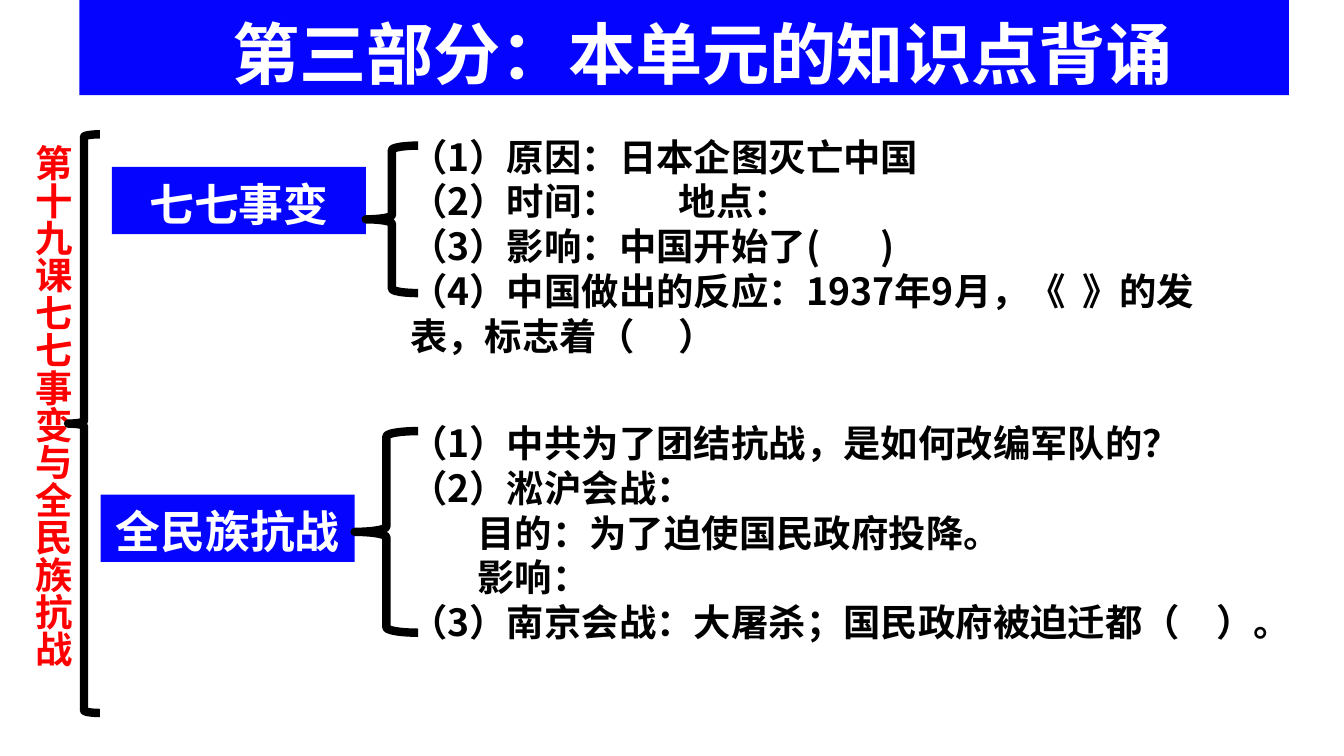
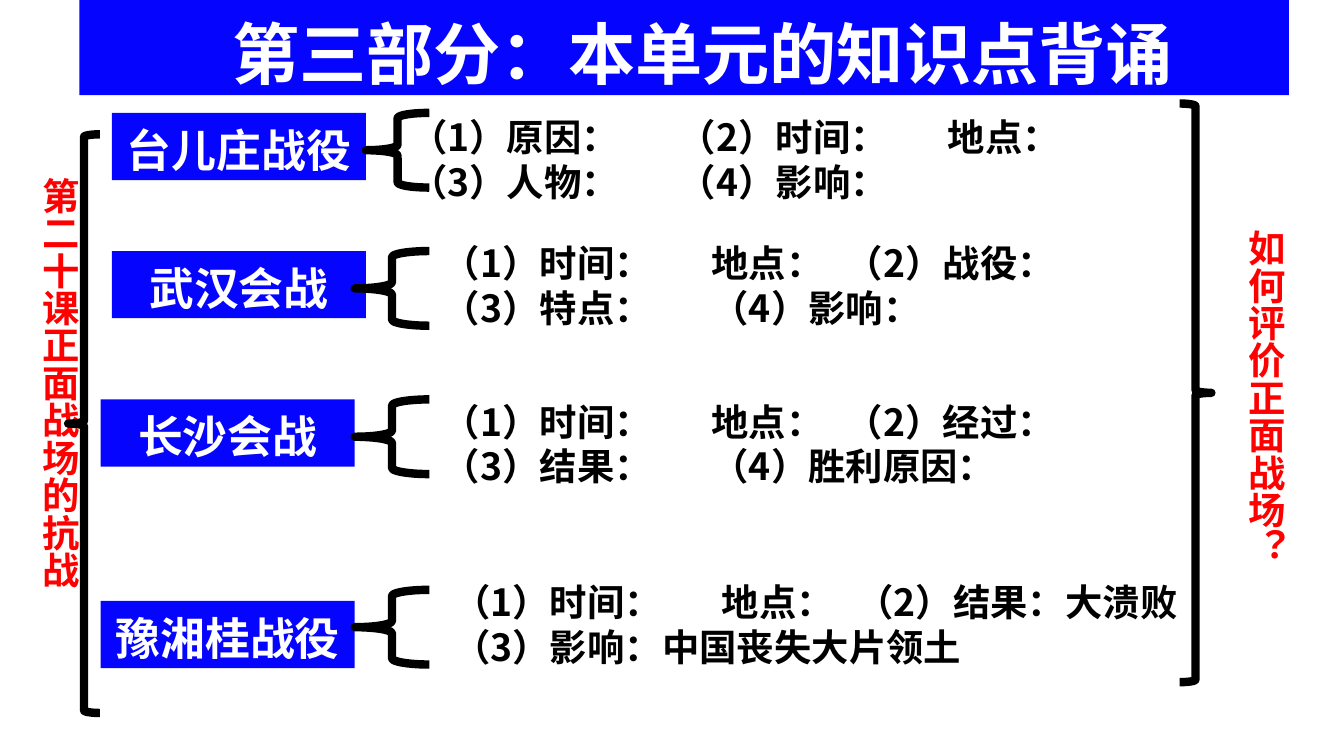
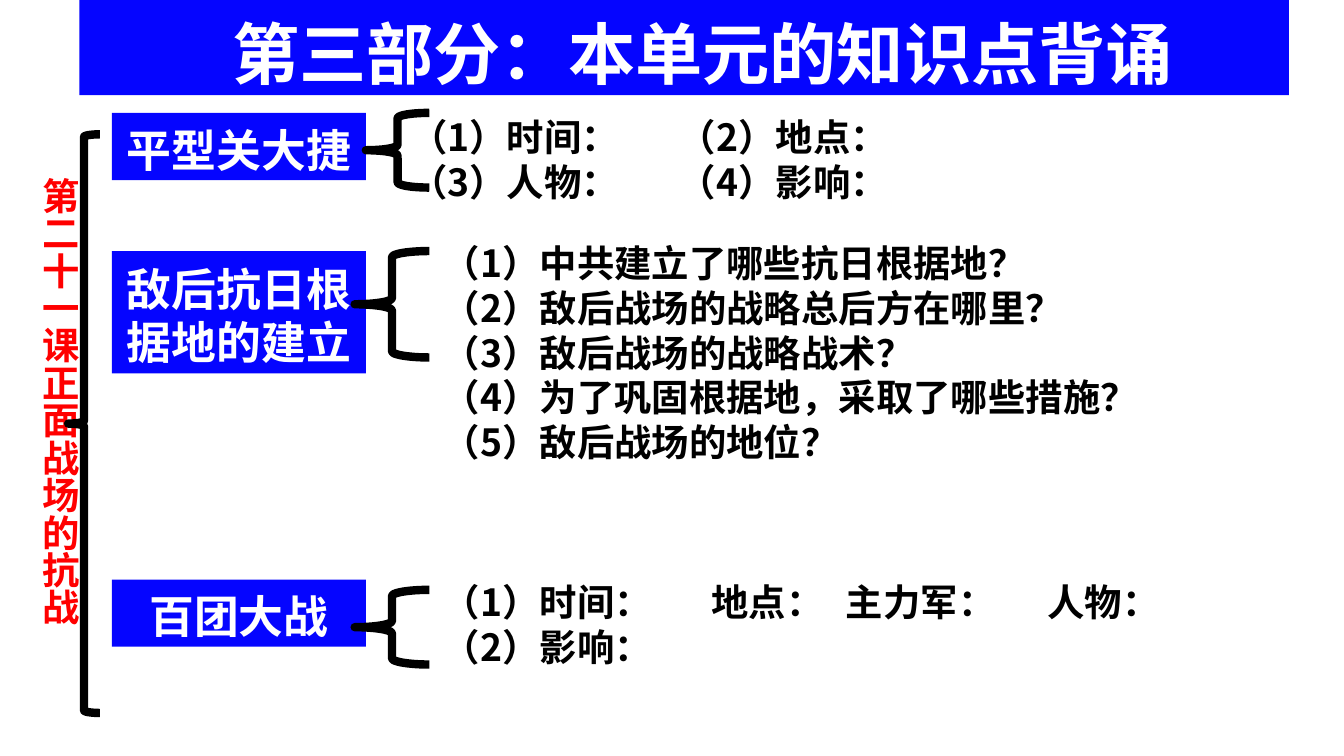
from lxml import etree
from pptx import Presentation
from pptx.dml.color import RGBColor
from pptx.enum import shapes, text
from pptx.oxml import ns
from pptx.util import Pt

COLORS = {"blue": "0000FF", "red": "FF0000", "black": "000000", "white": "FFFFFF"}
FONT = "Noto Sans CJK SC"
TITLE = "第三部分：本单元的知识点背诵"


def place(shape, x, y, w, h):
    shape.left, shape.top, shape.width, shape.height = Pt(x), Pt(y), Pt(w), Pt(h)


def write(shape, lines, size=20, color="black", font=FONT, align="LEFT", anchor="TOP",
          left=7.2, top=5.6, fill=None, vert=None):
    if fill:
        shape.fill.solid()
        shape.fill.fore_color.rgb = RGBColor.from_string(COLORS[fill])
        tint = shape.fill._xPr.find(".//" + ns.qn("a:srgbClr"))
        etree.SubElement(tint, ns.qn("a:alpha"), val="98000")
    frame = shape.text_frame
    frame.word_wrap = True
    frame.auto_size = text.MSO_AUTO_SIZE.NONE
    frame.vertical_anchor = text.MSO_ANCHOR[anchor]
    frame.margin_left, frame.margin_right = Pt(left), Pt(7.2)
    frame.margin_top, frame.margin_bottom = Pt(top), Pt(0)
    if vert:
        frame._txBody.bodyPr.set("vert", vert)
    for i, (line, stops) in enumerate(lines):
        para = frame.add_paragraph() if i else frame.paragraphs[0]
        para.alignment = text.PP_ALIGN[align]
        para.line_spacing = Pt(size * 1.2)
        para.space_before = para.space_after = Pt(0)
        props = para._p.get_or_add_pPr()
        props.set("marL", "0")
        props.set("indent", "0")
        etree.SubElement(props, ns.qn("a:buNone"))
        if stops:
            tabs = etree.SubElement(props, ns.qn("a:tabLst"))
            for stop in stops:
                etree.SubElement(tabs, ns.qn("a:tab"), pos=str(Pt(stop)), algn="l")
        run = para.add_run()
        run.text = line
        run.font.size, run.font.bold = Pt(size), True
        run.font.color.rgb = RGBColor.from_string(COLORS[color])
        run.font.name = font
        etree.SubElement(run._r.get_or_add_rPr(), ns.qn("a:ea"), typeface=FONT)


PAGES = [
    {
        "sides": [("第十九课七七事变与全民族抗战", (5, 72, 39, 323))],
        "spans": [(36.5, 72, 17, 310)],
        "groups": [
            ("七七事变", (60, 89.5, 136, 36), (196, 78, 28, 79), (212.5, 66, 454, 128), [
                ("（1）原因：日本企图灭亡中国", []),
                ("（2）时间：\t地点：", [139]),
                ("（3）影响：中国开始了(\t)", [257]),
                ("（4）中国做出的反应：1937年9月，《\t》的发表，标志着（\t）", [186, 397]),
            ]),
            ("全民族抗战", (54, 265, 136, 36), (190, 231, 34, 108), (212.5, 219.5, 493, 128), [
                ("（1）中共为了团结抗战，是如何改编军队的？", []),
                ("（2）淞沪会战：", []),
                ("\t目的：为了迫使国民政府投降。", [42]),
                ("\t影响：", [42]),
                ("（3）南京会战：大屠杀；国民政府被迫迁都（\t）。", [431]),
            ]),
        ],
    },
    {
        "sides": [("第二十课正面战场的抗战", (8.5, 89.5, 39, 290)),
                  ("如何评价正面战场？", (654.5, 117.5, 39, 204))],
        "spans": [(36.5, 72, 17, 310), (632, 55.5, 17, 310)],
        "groups": [
            ("台儿庄战役", (60, 60.5, 136, 36), (196, 60.5, 34, 40), (212.5, 55.5, 454, 55), [
                ("（1）原因：\t（2）时间：\t地点：", [135, 275]),
                ("（3）人物：\t（4）影响：", [144]),
            ]),
            ("武汉会战", (60, 134.5, 136, 36), (190, 134.5, 40, 40), (230, 123, 454, 55), [
                ("（1）时间：\t地点：\t（2）战役：", [139, 213]),
                ("（3）特点：\t（4）影响：", [180]),
            ]),
            ("长沙会战", (54, 214, 136, 36), (190, 214, 40, 40), (230, 208, 454, 55), [
                ("（1）时间：\t地点：\t（2）经过：", [139, 213]),
                ("（3）结果：\t（4）胜利原因：", [180]),
            ]),
            ("豫湘桂战役", (54, 322, 136, 36), (190, 316, 40, 40), (235.5, 304.5, 454, 55), [
                ("（1）时间：\t地点：\t（2）结果：大溃败", [139, 203]),
                ("（3）影响：中国丧失大片领土", []),
            ]),
        ],
    },
    {
        "sides": [("第二十一课正面战场的抗战", (8.5, 89.5, 39, 290))],
        "spans": [(36.5, 72, 17, 310)],
        "groups": [
            ("平型关大捷", (60, 60.5, 136, 36), (196, 60.5, 34, 40), (212.5, 55.5, 454, 55), [
                ("（1）时间：\t（2）地点：", [139]),
                ("（3）人物：\t（4）影响：", [139]),
            ]),
            ("敌后抗日根据地的建立", (60, 134.5, 136, 65.5), (190, 134.5, 40, 57),
             (230, 123, 454, 128), [
                ("（1）中共建立了哪些抗日根据地？", []),
                ("（2）敌后战场的战略总后方在哪里？", []),
                ("（3）敌后战场的战略战术？", []),
                ("（4）为了巩固根据地，采取了哪些措施？", []),
                ("（5）敌后战场的地位？", []),
            ]),
            ("百团大战", (60, 310.5, 136, 36), (190, 316, 40, 40), (230, 304.5, 454, 55), [
                ("（1）时间：\t地点：\t主力军：\t人物：", [139, 213, 302]),
                ("（2）影响：", []),
            ]),
        ],
    },
]

deck = Presentation()
deck.slide_width, deck.slide_height = Pt(720), Pt(405)

for page in PAGES:
    slide = deck.slides.add_slide(deck.slide_layouts[4])
    title, *bodies = slide.placeholders
    place(title, 42.5, 0, 648, 51)
    write(title, [(TITLE, [])], size=36, color="white", font="Arial", align="CENTER",
          anchor="MIDDLE", left=27, top=5, fill="blue")

    for words, box in page["sides"]:
        side = slide.shapes.add_textbox(*map(Pt, box))
        write(side, [(words, [])], color="red", vert="eaVert")

    for body, (name, spot, brace, box, lines) in zip(bodies, page["groups"]):
        place(body, *box)
        write(body, lines)
        label = slide.shapes.add_shape(shapes.MSO_SHAPE.RECTANGLE, *map(Pt, spot))
        label.shadow.inherit = False
        label.line.fill.background()
        write(label, [(name, [])], size=24, color="white", font="Arial", align="CENTER",
              anchor="MIDDLE", top=3, fill="blue")

    for spare in bodies[len(page["groups"]):]:
        spare._element.getparent().remove(spare._element)

    for box in page["spans"] + [group[2] for group in page["groups"]]:
        brace = slide.shapes.add_shape(shapes.MSO_SHAPE.LEFT_BRACE, *map(Pt, box))
        brace.shadow.inherit = False
        brace.fill.background()
        brace.line.color.rgb = RGBColor.from_string(COLORS["black"])
        brace.line.width = Pt(4.5)
        if box[0] > 360:
            brace._element.spPr.xfrm.set("flipH", "1")

deck.save("out.pptx")
